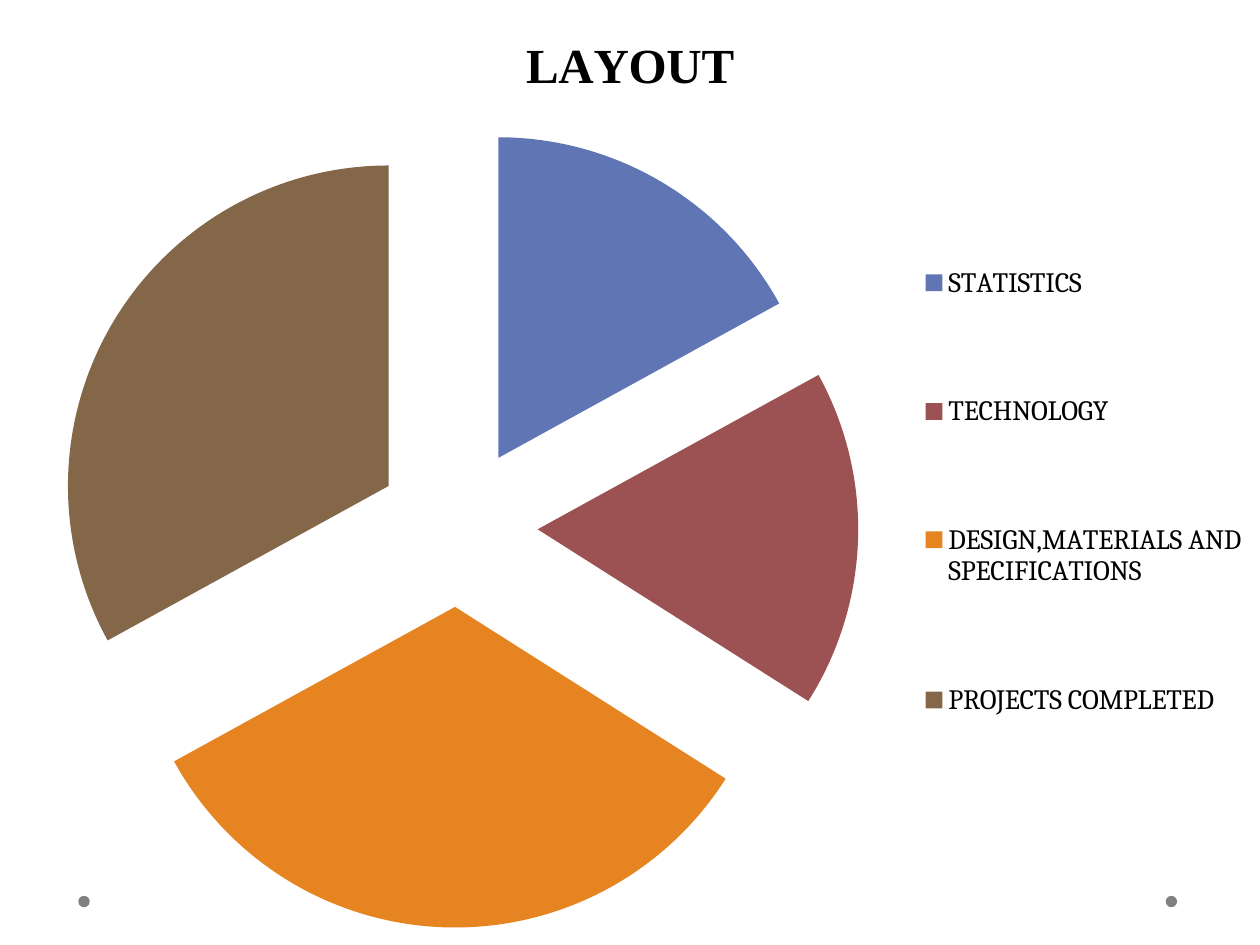
from lxml import etree
from pptx import Presentation
from pptx.chart.data import CategoryChartData
from pptx.dml.color import RGBColor
from pptx.enum.chart import XL_CHART_TYPE as ChartType, XL_LEGEND_POSITION as LegendPosition
from pptx.enum.shapes import MSO_SHAPE as Shape
from pptx.oxml import parse_xml
from pptx.oxml.ns import nsdecls, qn
from pptx.util import Cm, Pt

SECTIONS = [
    ("STATISTICS", 17, "6076B4"),
    ("TECHNOLOGY", 17, "9C5252"),
    ("DESIGN,MATERIALS AND SPECIFICATIONS", 33, "E68422"),
    ("PROJECTS COMPLETED", 33, "846648"),
]


def color(value):
    return RGBColor.from_string(value)


def style_font(font, name, size, bold=False):
    font.name, font.size, font.bold = name, Pt(size), bold
    font.color.rgb = color("000000")


def add_dots(page, left, top, width, size):
    """Put one grey dot at each end of a strip."""
    for x in (left, left + width - size):
        dot = page.shapes.add_shape(Shape.OVAL, x, top, size, size)
        dot.shadow.inherit = False
        dot.fill.solid()
        dot.fill.fore_color.rgb = color("808080")
        dot.line.fill.background()


def place_legend(legend, x, y, width, height):
    """Fix the legend's box, in fractions of the chart."""
    layout = parse_xml(f"<c:layout {nsdecls('c')}><c:manualLayout/></c:layout>")
    manual = layout[0]
    settings = {"xMode": "edge", "yMode": "edge", "x": x, "y": y, "w": width, "h": height}
    for tag, value in settings.items():
        etree.SubElement(manual, qn(f"c:{tag}")).set("val", str(value))
    element = legend._element
    for old in element.findall(qn("c:layout")):
        element.remove(old)
    element.find(qn("c:legendPos")).addnext(layout)


def explode(series, percent):
    explosion = parse_xml(f'<c:explosion {nsdecls("c")} val="{percent}"/>')
    series._element.find(qn("c:dPt")).addprevious(explosion)


def add_section_pie(page, left, top, width, height):
    data = CategoryChartData()
    data.categories = [name for name, _, _ in SECTIONS]
    data.add_series("Series 1", [share for _, share, _ in SECTIONS])
    chart = page.shapes.add_chart(ChartType.PIE, left, top, width, height, data).chart
    style_font(chart.font, "Cambria", 18)

    chart.has_title = True
    title = chart.chart_title
    title.include_in_layout = False
    title.text_frame.text = "LAYOUT"
    style_font(title.text_frame.paragraphs[0].font, "Times New Roman", 28, bold=True)

    chart.has_legend = True
    chart.legend.position = LegendPosition.RIGHT
    chart.legend.include_in_layout = False
    style_font(chart.legend.font, "Cambria", 16)
    place_legend(chart.legend, 0.72, 0.18, 0.28, 0.68)

    plot = chart.plots[0]
    plot.vary_by_categories = True
    series = plot.series[0]
    for index, (_, _, fill) in enumerate(SECTIONS):
        point = series.points[index].format
        point.fill.solid()
        point.fill.fore_color.rgb = color(fill)
        point.line.fill.background()
    explode(series, 25)


def main():
    deck = Presentation()
    deck.slide_width, deck.slide_height = Cm(25.4), Cm(19.05)
    page = deck.slides.add_slide(deck.slide_layouts[6])
    add_dots(page, Cm(1.58), Cm(18.06), Cm(22.15), Cm(0.23))
    add_section_pie(page, 0, 0, deck.slide_width, deck.slide_height)
    deck.save("out.pptx")


if __name__ == "__main__":
    main()
